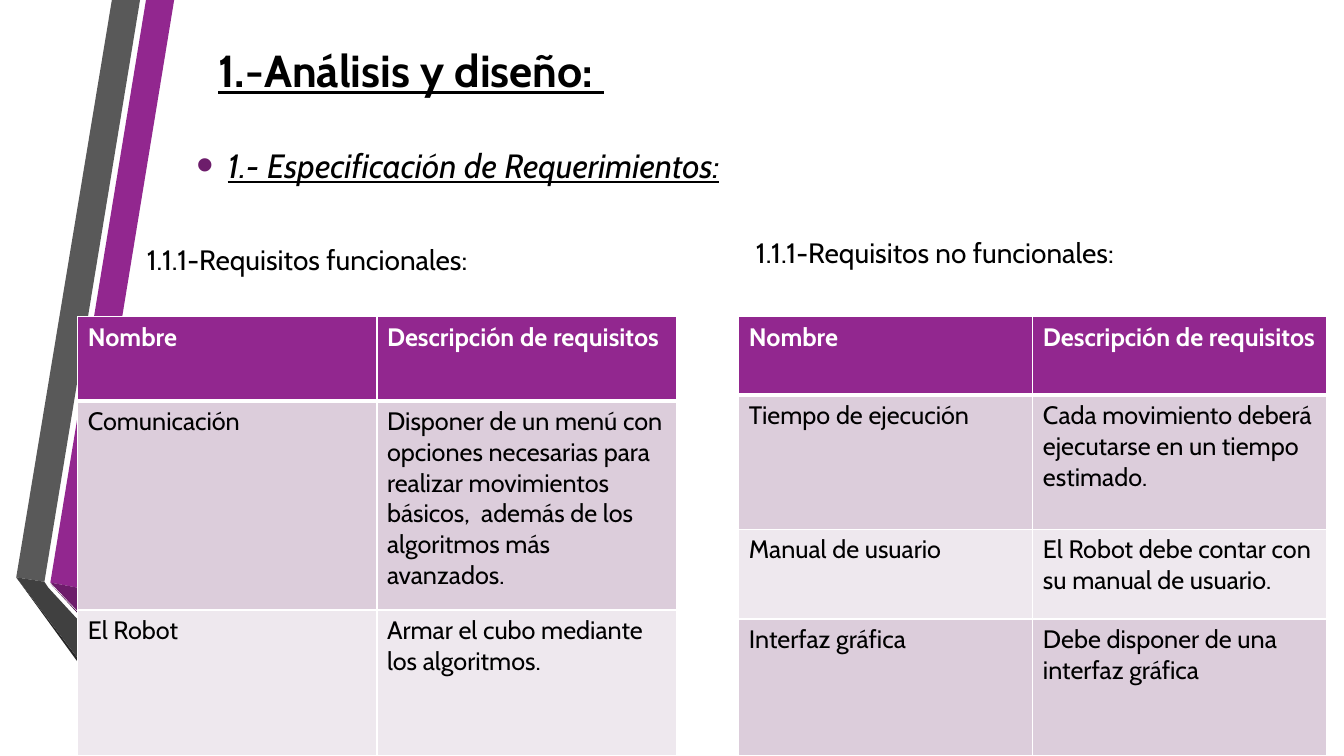
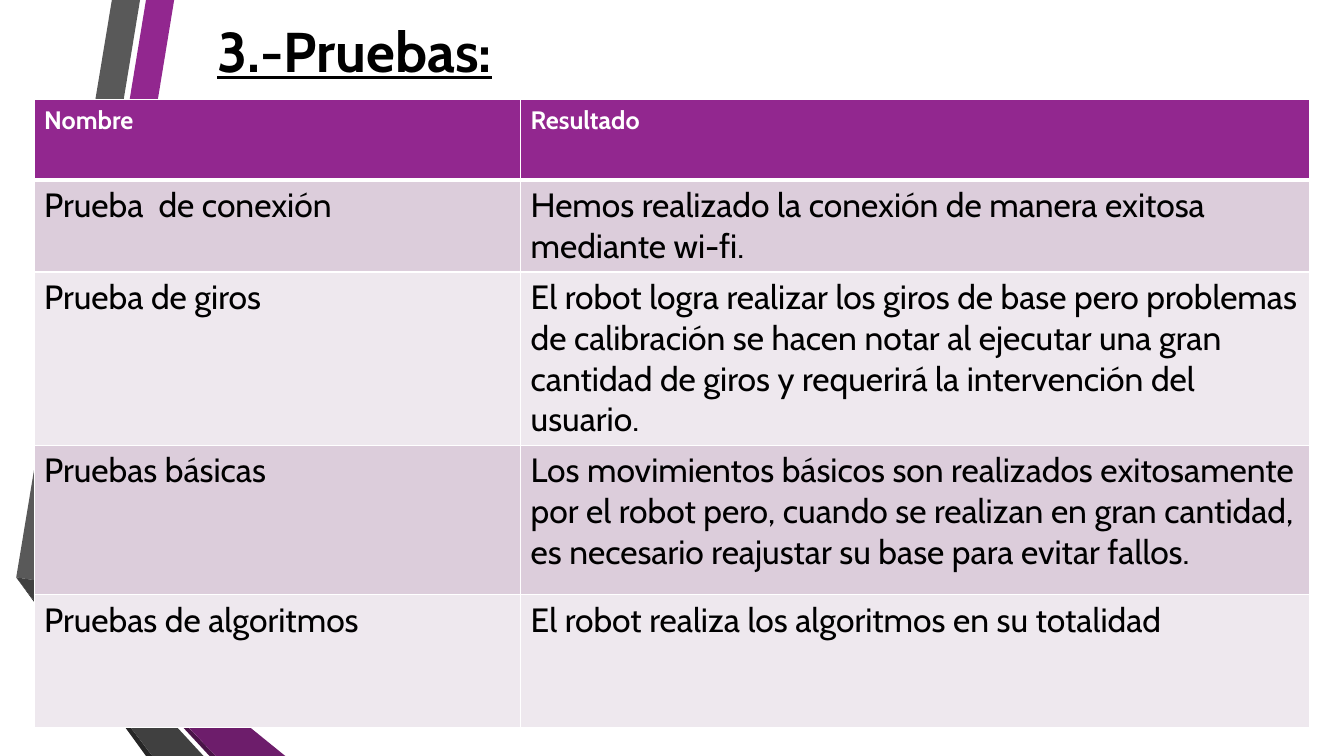
from lxml.etree import SubElement
from pptx import Presentation
from pptx.dml.color import RGBColor
from pptx.enum.text import MSO_ANCHOR as Anchor, MSO_AUTO_SIZE as AutoSize, PP_ALIGN as Align
from pptx.oxml.ns import qn
from pptx.util import Cm, Pt

FONT = "Cabin"
BLACK, WHITE = "000000", "FFFFFF"
PURPLE, DEEP_PURPLE = "92278F", "6D1D6B"
ROW_FILLS = ("DCCDDB", "EEE8EE")
PAGE_WIDTH, PAGE_HEIGHT = 33.87, 19.05
TITLE_ONLY = 5

RIBBONS = (
    (PURPLE, ((1.27, 14.68), (1.96, 14.81), (4.39, 0), (3.68, 0))),
    ("595959", ((3.53, 0), (2.82, 0), (0.41, 14.55), (1.12, 14.66))),
    ("262626", ((0.41, 14.55), (3.68, PAGE_HEIGHT), (3.84, PAGE_HEIGHT))),
    ("491447", ((1.27, 14.71), (5.28, PAGE_HEIGHT), (5.44, PAGE_HEIGHT))),
    (DEEP_PURPLE, ((1.27, 14.68), (5.44, PAGE_HEIGHT), (7.19, PAGE_HEIGHT), (1.96, 14.81))),
    ("404040", ((5.13, PAGE_HEIGHT), (1.22, 14.81), (1.12, 14.66), (0.41, 14.55), (3.84, PAGE_HEIGHT))),
)

FUNCTIONAL = (
    ("Nombre", "Descripción de requisitos"),
    ("Comunicación", "Disponer de un menú con opciones necesarias para realizar movimientos "
                     "básicos,  además de los algoritmos más avanzados."),
    ("El Robot", "Armar el cubo mediante los algoritmos."),
)
NON_FUNCTIONAL = (
    ("Nombre", "Descripción de requisitos"),
    ("Tiempo de ejecución", "Cada movimiento deberá ejecutarse en un tiempo estimado."),
    ("Manual de usuario", "El Robot debe contar con su manual de usuario."),
    ("Interfaz gráfica", "Debe disponer de una interfaz gráfica"),
)
TESTS = (
    ("Nombre", "Resultado"),
    ("Prueba  de conexión", "Hemos realizado la conexión de manera exitosa mediante wi-fi."),
    ("Prueba de giros", "El robot logra realizar los giros de base pero problemas de calibración "
                        "se hacen notar al ejecutar una gran cantidad de giros y requerirá la "
                        "intervención del usuario."),
    ("Pruebas básicas", "Los movimientos básicos son realizados exitosamente por el robot pero, "
                        "cuando se realizan en gran cantidad, es necesario reajustar su base para "
                        "evitar fallos."),
    ("Pruebas de algoritmos", "El robot realiza los algoritmos en su totalidad"),
)


def color(value):
    """Turn a hex string into a colour."""
    return RGBColor.from_string(value)


def paint(target, value):
    """Fill a shape or cell with a solid colour."""
    target.fill.solid()
    target.fill.fore_color.rgb = color(value)


def write(frame, text, size=18, ink=BLACK, bold=False, italic=False, underline=False,
          align=Align.LEFT, anchor=Anchor.TOP):
    """Write one formatted paragraph into a text frame and return it."""
    frame.word_wrap = True
    frame.vertical_anchor = anchor
    para = frame.paragraphs[0]
    para.alignment = align
    span = para.add_run()
    span.text = text
    font = span.font
    font.name, font.size = FONT, Pt(size)
    font.bold, font.italic, font.underline = bold, italic, underline
    font.color.rgb = color(ink)
    return para


def add_text(page, box, text, **style):
    """Place a text box and return its paragraph."""
    label = page.shapes.add_textbox(*map(Cm, box))
    return write(label.text_frame, text, **style)


def add_bullet(para):
    """Give a paragraph a hanging purple bullet."""
    para.space_before, para.space_after = Pt(5), Pt(6)
    props = para._p.get_or_add_pPr()
    indent = Cm(0.79)
    props.set("marL", str(indent))
    props.set("indent", str(-indent))
    tint = SubElement(props, qn("a:buClr"))
    SubElement(tint, qn("a:srgbClr"), val=DEEP_PURPLE)
    SubElement(props, qn("a:buSzPct"), val="145000")
    SubElement(props, qn("a:buFont"), typeface="Arial")
    SubElement(props, qn("a:buChar"), char="•")


def add_borders(cell, **widths):
    """Draw white cell borders, with widths in points by side."""
    props = cell._tc.get_or_add_tcPr()
    for side in "LRTB":
        line = SubElement(props, qn(f"a:ln{side}"), w=str(Pt(widths.get(side, 1))))
        fill = SubElement(line, qn("a:solidFill"))
        SubElement(fill, qn("a:srgbClr"), val=WHITE)


def add_grid(page, left, top, widths, heights, rows, size=18):
    """Place a table with a purple header and alternating rows."""
    frame = page.shapes.add_table(len(rows), len(widths), Cm(left), Cm(top),
                                  Cm(sum(widths)), Cm(sum(heights)))
    table = frame.table
    table.horz_banding = False
    for column, width in zip(table.columns, widths):
        column.width = Cm(width)
    for index, (row, height, texts) in enumerate(zip(table.rows, heights, rows)):
        row.height = Cm(height)
        header = index == 0
        for cell, text in zip(row.cells, texts):
            add_borders(cell, B=3 if header else 1, T=3 if index == 1 else 1)
            paint(cell, PURPLE if header else ROW_FILLS[(index - 1) % 2])
            write(cell.text_frame, text, size=18 if header else size,
                  ink=WHITE if header else BLACK, bold=header)


def add_ribbons(page):
    """Draw the folded ribbons along the left edge."""
    for fill, points in RIBBONS:
        start, *rest = [(Cm(x), Cm(y)) for x, y in points]
        outline = page.shapes.build_freeform(*start)
        outline.add_line_segments(rest, close=True)
        ribbon = outline.convert_to_shape()
        ribbon.shadow.inherit = False
        ribbon.line.fill.background()
        paint(ribbon, fill)


def add_page(deck, title, box, size):
    """Add a page with the ribbons and an underlined title."""
    page = deck.slides.add_slide(deck.slide_layouts[TITLE_ONLY])
    add_ribbons(page)
    heading = page.shapes.title
    heading.left, heading.top, heading.width, heading.height = map(Cm, box)
    heading.text_frame.auto_size = AutoSize.NONE
    write(heading.text_frame, title, size=size, bold=True, underline=True,
          align=Align.CENTER, anchor=Anchor.MIDDLE)
    return page


def add_requirements(deck):
    """Build the page with both requirement tables."""
    page = add_page(deck, "1.-Análisis y diseño: ", (2.69, 0, 15.34, 3.53), 32)
    subtitle = add_text(page, (4.7, 3.12, 26.7, 2.08), "1.- Especificación de Requerimientos:",
                        size=24, italic=True, underline=True, anchor=Anchor.MIDDLE)
    add_bullet(subtitle)
    top = 7.98
    add_grid(page, 1.96, top, (7.54, 7.54), (2.13, 5.26, 3.68), FUNCTIONAL)
    add_grid(page, 18.62, top, (7.41, 7.41), (1.98, 3.38, 2.26, 3.43), NON_FUNCTIONAL)
    add_text(page, (3.45, 5.99, 12.1, 1.12), "1.1.1-Requisitos funcionales:", size=20)
    add_text(page, (18.8, 5.82, 9.7, 1.12), "1.1.1-Requisitos no funcionales:", size=20)


def add_tests(deck):
    """Build the page with the test results."""
    page = add_page(deck, "3.-Pruebas:", (3.35, 0, 11.18, 2.51), 40)
    add_grid(page, 0.86, 2.51, (12.26, 19.88), (2.03, 2.26, 4.37, 3.76, 3.35), TESTS, size=24)


def main():
    """Build and save the deck."""
    deck = Presentation()
    deck.slide_width, deck.slide_height = Cm(PAGE_WIDTH), Cm(PAGE_HEIGHT)
    add_requirements(deck)
    add_tests(deck)
    deck.save("out.pptx")


if __name__ == "__main__":
    main()
